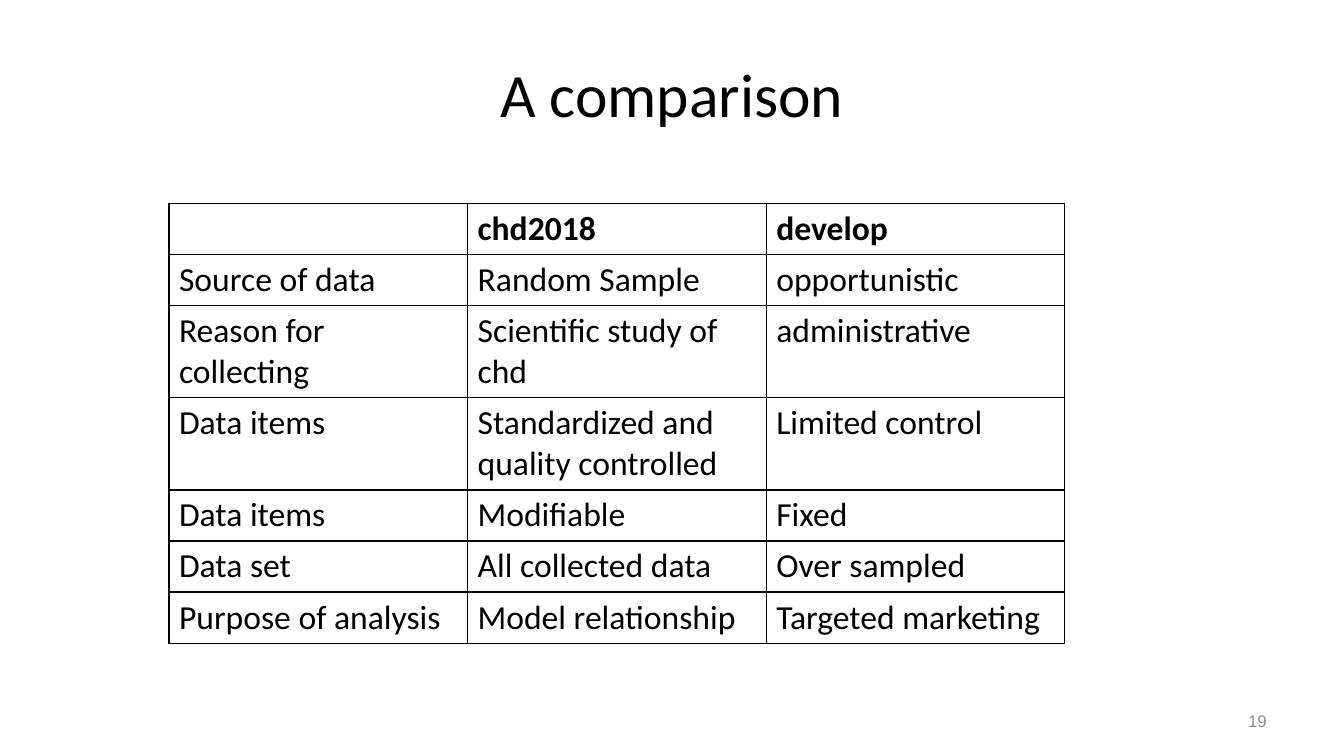
from dataclasses import dataclass

from lxml.etree import SubElement
from pptx import Presentation
from pptx.dml.color import RGBColor as RGB
from pptx.enum.text import MSO_ANCHOR as ANCHOR, PP_ALIGN as ALIGN
from pptx.oxml.ns import qn
from pptx.util import Pt


@dataclass(frozen=True)
class Theme:
    text: str = "000000"
    muted: str = "8C8C8C"
    border: str = "000000"
    font: str = "Calibri"
    number_font: str = "Arial"
    title_size: float = 44
    table_size: float = 24
    number_size: float = 12
    border_width: float = 1


ROWS = [
    ("", "chd2018", "develop"),
    ("Source of data", "Random Sample", "opportunistic"),
    ("Reason for collecting", "Scientific study of chd", "administrative"),
    ("Data items", "Standardized and quality controlled", "Limited control"),
    ("Data items", "Modifiable", "Fixed"),
    ("Data set", "All collected data", "Over sampled"),
    ("Purpose of analysis", "Model relationship", "Targeted marketing"),
]
TWO_LINE_ROWS = {2, 3}
LINE_HEIGHT, CELL_PADDING = 29.3, 7.2


def write(tf, text, *, font, size, color, bold=False, align=ALIGN.LEFT):
    p = tf.paragraphs[0]
    p.alignment = align
    p.font.size = Pt(size)
    if not text:
        return
    r = p.add_run()
    r.text = text
    r.font.name = font
    r.font.size = Pt(size)
    r.font.bold = bold
    r.font.color.rgb = RGB.from_string(color)


class SlideBuilder:
    def __init__(self, prs, theme):
        self.theme = theme
        self.s = prs.slides.add_slide(prs.slide_layouts[6])

    def text(self, text, x, y, w, h, **fmt):
        tf = self.s.shapes.add_textbox(Pt(x), Pt(y), Pt(w), Pt(h)).text_frame
        tf.word_wrap = True
        tf.vertical_anchor = ANCHOR.MIDDLE
        write(tf, text, **fmt)

    def border(self, cell):
        """Draw a solid line on all four sides of a cell."""
        tc_pr = cell._tc.get_or_add_tcPr()
        for i, side in enumerate(("a:lnL", "a:lnR", "a:lnT", "a:lnB")):
            ln = SubElement(tc_pr, qn(side), w=str(Pt(self.theme.border_width)))
            fill = SubElement(ln, qn("a:solidFill"))
            SubElement(fill, qn("a:srgbClr"), val=self.theme.border)
            tc_pr.insert(i, ln)  # lines come before the fill

    def table(self, rows, heights, x, y, w):
        t = self.theme
        table = self.s.shapes.add_table(
            len(rows), len(rows[0]), Pt(x), Pt(y), Pt(w), Pt(sum(heights))).table
        table.horz_banding = False
        for i, (values, height) in enumerate(zip(rows, heights)):
            table.rows[i].height = Pt(height)
            for j, value in enumerate(values):
                cell = table.cell(i, j)
                cell.fill.background()
                self.border(cell)
                write(cell.text_frame, value, font=t.font, size=t.table_size,
                      color=t.text, bold=i == 0)


def main():
    prs = Presentation()
    prs.slide_width, prs.slide_height = Pt(960), Pt(540)
    t = Theme()
    slide = SlideBuilder(prs, t)
    slide.text("A comparison", 48, 21.6, 864, 90, font=t.font,
               size=t.title_size, color=t.text, align=ALIGN.CENTER)
    slide.text("19", 688, 500.5, 224, 28.75, font=t.number_font,
               size=t.number_size, color=t.muted, align=ALIGN.RIGHT)
    heights = [LINE_HEIGHT * (2 if i in TWO_LINE_ROWS else 1) + CELL_PADDING
               for i in range(len(ROWS))]
    slide.table(ROWS, heights, 120.7, 145.4, 640)
    prs.save("out.pptx")


if __name__ == "__main__":
    main()
